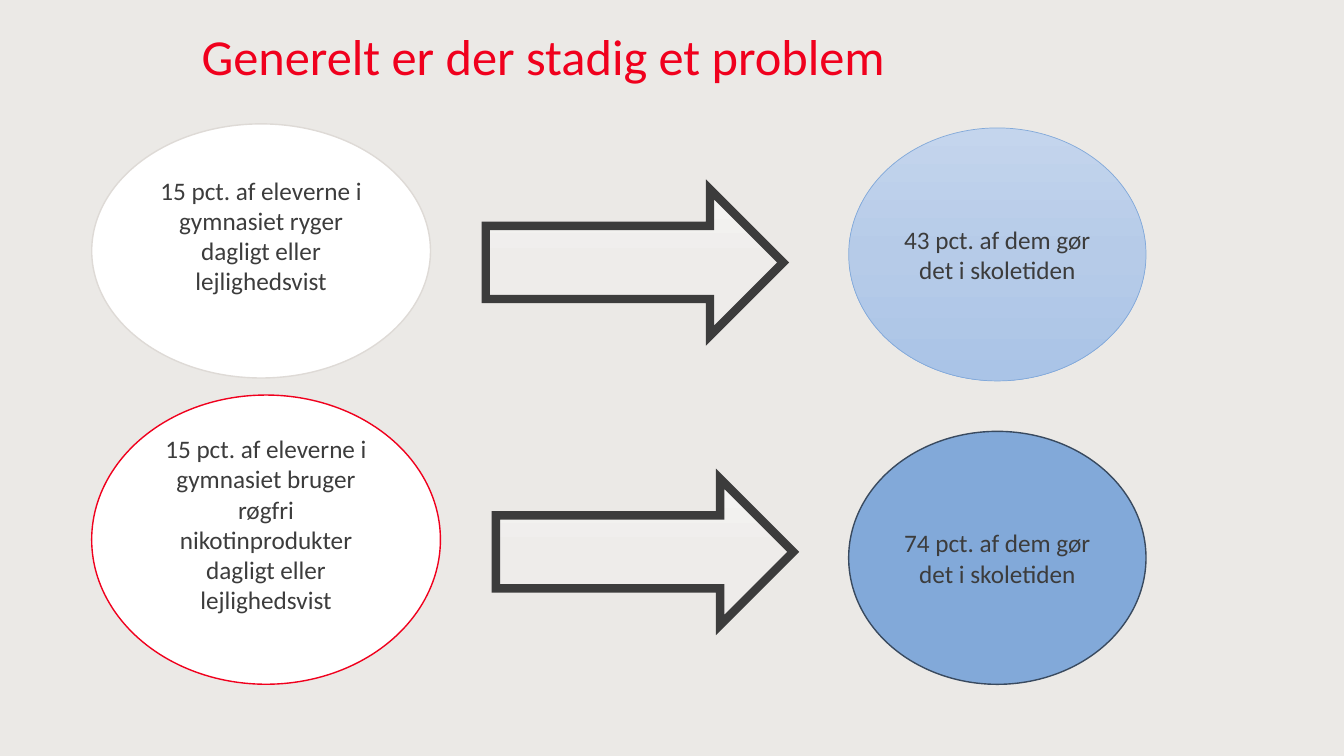
from copy import deepcopy
from lxml import etree
from pptx import Presentation
from pptx.dml.color import RGBColor
from pptx.enum import shapes, text
from pptx.oxml.ns import qn
from pptx.util import Pt

HUES = {
    "back": "EBE9E6", "red": "F0001D", "ink": "3C3C3C", "white": "FFFFFF",
    "sand": "DEDAD6", "blue": "82A9D9", "navy": "394A5F",
}
FADES = {
    "arrow": ("F6F5F4", "EEECEA", "EDEAE8"),
    "sky": ("C4D5ED", "B6CBE8", "AAC4E7"),
}
LINE = 22  # height of one line of 18 pt text


def rgb(name):
    return RGBColor.from_string(HUES[name])


def write(frame, words, size=18, hue="ink", align=text.PP_ALIGN.CENTER, lead=1.0):
    frame.word_wrap = True
    par = frame.paragraphs[0]
    par.alignment = align
    par.line_spacing = lead
    run = par.add_run()
    run.text = words
    run.font.size = Pt(size)
    run.font.name = "Calibri"
    run.font.color.rgb = rgb(hue)


def fade(shape, stops):
    """Fill the shape from top to bottom with three evenly spaced colours."""
    shape.fill.gradient()
    shape.fill.gradient_angle = 270
    first = shape._element.spPr.find(".//" + qn("a:gs"))
    first.addnext(deepcopy(first))
    for i, (stop, hue) in enumerate(zip(shape.fill.gradient_stops, stops)):
        stop.position = i / 2
        stop.color.rgb = RGBColor.from_string(hue)


def draw(slide, kind, box, fill, line, width):
    shape = slide.shapes.add_shape(kind, *map(Pt, box))
    shape.shadow.inherit = False
    if fill in FADES:
        fade(shape, FADES[fill])
    else:
        shape.fill.solid()
        shape.fill.fore_color.rgb = rgb(fill)
    shape.line.color.rgb = rgb(line)
    shape.line.width = Pt(width)
    return shape


def title(slide, box, words):
    frame = slide.shapes.add_textbox(*map(Pt, box)).text_frame
    frame.margin_left = frame.margin_right = 0
    frame.margin_top = frame.margin_bottom = 0
    write(frame, words, size=36, hue="red", align=text.PP_ALIGN.LEFT, lead=0.9)


def oval(slide, box, words, fill, line, width=1, lift=0):
    """Draw an ellipse; lift is extra room kept free below its text."""
    shape = draw(slide, shapes.MSO_SHAPE.OVAL, box, fill, line, width)
    frame = shape.text_frame
    frame.vertical_anchor = text.MSO_ANCHOR.MIDDLE
    frame.margin_bottom = Pt(3.6 + lift)
    write(frame, words)


def arrow(slide, box):
    shape = draw(slide, shapes.MSO_SHAPE.RIGHT_ARROW, box, "arrow", "ink", 6)
    edge = shape._element.spPr.find(qn("a:ln"))
    etree.SubElement(edge, qn("a:miter"), lim="800000")


def row(slide, box, cause, edge, size, shift, effect, look):
    """Place a cause, an arrow and an effect; shift is the arrow's offset."""
    left, top, wide, high = box
    oval(slide, (left, top, *size), cause, "white", edge, lift=LINE)
    arrow(slide, (left + shift[0], top + shift[1], 212.4, 104.4))
    end = (left + wide - 212.4, top + high - 180.7, 212.4, 180.7)
    oval(slide, end, effect, *look)


def main():
    deck = Presentation()
    deck.slide_width, deck.slide_height = Pt(960), Pt(540)
    slide = deck.slides.add_slide(deck.slide_layouts[6])
    slide.background.fill.solid()
    slide.background.fill.fore_color.rgb = rgb("back")

    title(slide, (144, 23, 675.4, 49.7), "Generelt er der stadig et problem")
    row(slide, (65.5, 88.5, 753.1, 183.6),
        "15 pct. af eleverne i gymnasiet ryger dagligt eller lejlighedsvist",
        "sand", (242, 181.5), (281.5, 46.8),
        "43 pct. af dem gør det i skoletiden", ("sky", "blue", 0.5))
    row(slide, (65.5, 282.2, 753.1, 206.6),
        "15 pct. af eleverne i gymnasiet bruger røgfri nikotinprodukter "
        "dagligt eller lejlighedsvist",
        "red", (249.1, 206.6), (288.7, 59.8),
        "74 pct. af dem gør det i skoletiden", ("blue", "navy", 1))
    deck.save("out.pptx")


if __name__ == "__main__":
    main()
